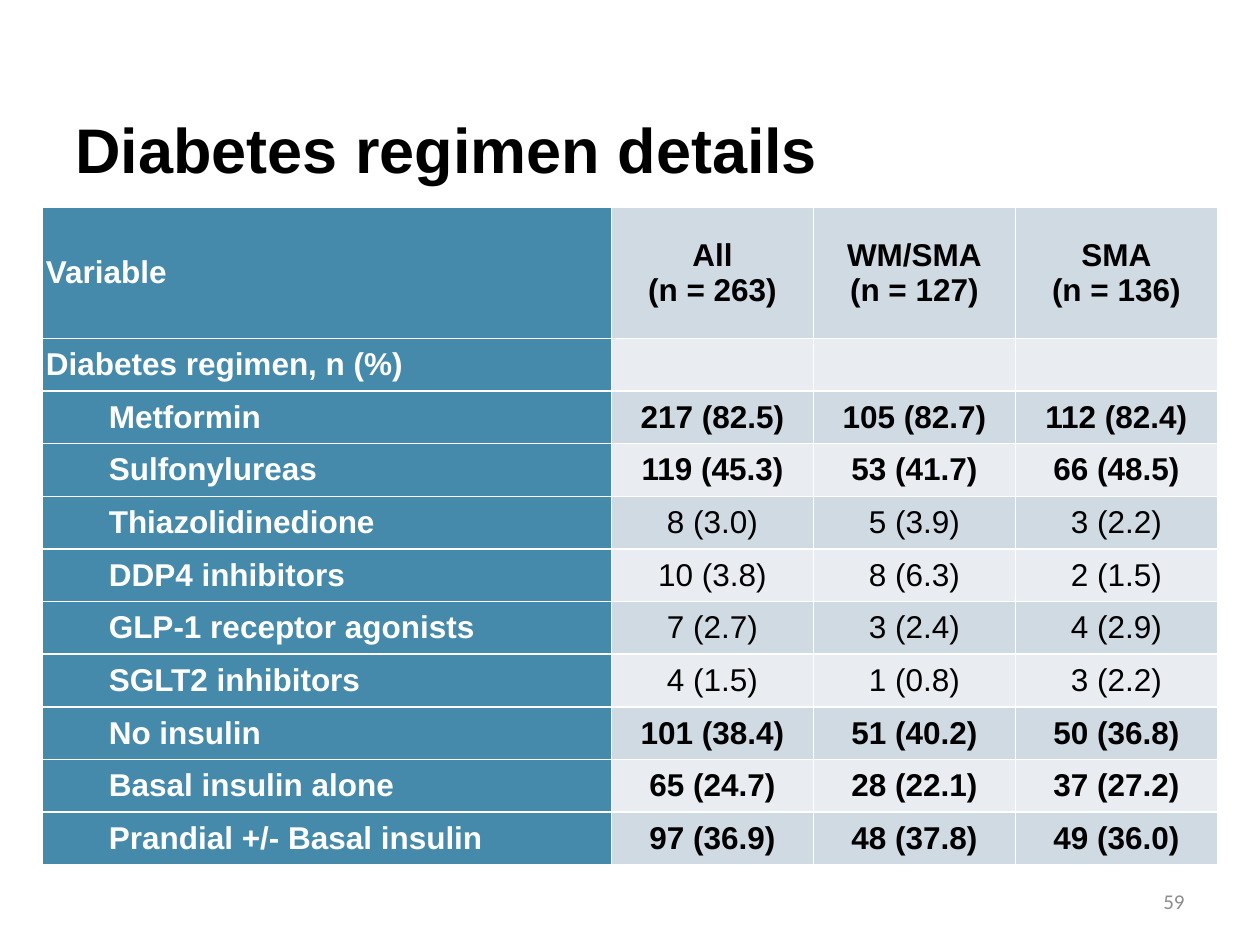
"""Build the diabetes regimen details table slide."""
from lxml import etree
from pptx import Presentation
from pptx.dml.color import RGBColor
from pptx.enum.text import MSO_ANCHOR, PP_ALIGN
from pptx.oxml.ns import qn
from pptx.util import Pt

LEFT, CENTER, RIGHT = PP_ALIGN.LEFT, PP_ALIGN.CENTER, PP_ALIGN.RIGHT
MIDDLE = MSO_ANCHOR.MIDDLE

BLACK = RGBColor(0, 0, 0)
WHITE = RGBColor(255, 255, 255)
GREY = RGBColor(0x8C, 0x8C, 0x8C)
TEAL = RGBColor(0x45, 0x8A, 0xAA)
BANDS = (RGBColor(0xCF, 0xDA, 0xE2), RGBColor(0xE9, 0xED, 0xF1))

TITLE = "Diabetes regimen details"
PAGE_NUMBER = "59"
HEADINGS = [
    ("Variable", "All\n(n = 263)", "WM/SMA\n(n = 127)", "SMA\n(n = 136)"),
    ("Diabetes regimen, n (%)", "", "", ""),
]
REGIMENS = [
    ("Metformin", "217 (82.5)", "105 (82.7)", "112 (82.4)"),
    ("Sulfonylureas", "119 (45.3)", "53 (41.7)", "66 (48.5)"),
    ("Thiazolidinedione", "8 (3.0)", "5 (3.9)", "3 (2.2)"),
    ("DDP4 inhibitors", "10 (3.8)", "8 (6.3)", "2 (1.5)"),
    ("GLP-1 receptor agonists", "7 (2.7)", "3 (2.4)", "4 (2.9)"),
    ("SGLT2 inhibitors", "4 (1.5)", "1 (0.8)", "3 (2.2)"),
    ("No insulin", "101 (38.4)", "51 (40.2)", "50 (36.8)"),
    ("Basal insulin alone", "65 (24.7)", "28 (22.1)", "37 (27.2)"),
    ("Prandial +/- Basal insulin", "97 (36.9)", "48 (37.8)", "49 (36.0)"),
]
ROWS = HEADINGS + REGIMENS
LIGHT_ROWS = {"Thiazolidinedione", "DDP4 inhibitors",
              "GLP-1 receptor agonists", "SGLT2 inhibitors"}

TABLE_LEFT, TABLE_TOP = 24, 118.5
COLUMN_WIDTHS = [325.4] + [115.4] * 3
ROW_HEIGHTS = [74.9] + [30.1] * (len(ROWS) - 1)
INDENT = 36
CELL_FORMAT = {"margin_left": Pt(2.2), "margin_right": Pt(2.2),
               "margin_top": 0, "margin_bottom": 0, "vertical_anchor": MIDDLE}
TITLE_FONT = {"name": "Arial", "size": Pt(36), "bold": True}
NUMBER_FONT = {"name": "Calibri", "size": Pt(12), "bold": False}
TABLE_FONT = {"name": "Arial", "size": Pt(18)}


def apply(target, values):
    for name, value in values.items():
        setattr(target, name, value)


def write_text(frame, text, font, color, alignment):
    frame.text = text
    for paragraph in frame.paragraphs:
        paragraph.alignment = alignment
        for run in paragraph.runs:
            apply(run.font, font)
            run.font.color.rgb = color


def add_text(slide, box, text, font, color, alignment):
    frame = slide.shapes.add_textbox(*map(Pt, box)).text_frame
    apply(frame, {"word_wrap": True, "vertical_anchor": MIDDLE})
    write_text(frame, text, font, color, alignment)


def add_borders(cell):
    properties = cell._tc.get_or_add_tcPr()
    for side in ("a:lnL", "a:lnR", "a:lnT", "a:lnB"):
        line = etree.SubElement(properties, qn(side), w=str(Pt(1)))
        fill = etree.SubElement(line, qn("a:solidFill"))
        etree.SubElement(fill, qn("a:srgbClr"), val=str(WHITE))


def fill_cell(cell, text, row, column):
    is_label = column == 0
    apply(cell, CELL_FORMAT)
    add_borders(cell)
    cell.fill.solid()
    cell.fill.fore_color.rgb = TEAL if is_label else BANDS[row % 2]
    bold = is_label or ROWS[row][0] not in LIGHT_ROWS
    write_text(cell.text_frame, text, {**TABLE_FONT, "bold": bold},
               WHITE if is_label else BLACK, LEFT if is_label else CENTER)
    if is_label and row >= len(HEADINGS):
        paragraph = cell.text_frame.paragraphs[0]
        paragraph._p.get_or_add_pPr().set("marL", str(Pt(INDENT)))


def add_regimen_table(slide):
    size = Pt(sum(COLUMN_WIDTHS)), Pt(sum(ROW_HEIGHTS))
    table = slide.shapes.add_table(len(ROWS), len(COLUMN_WIDTHS), Pt(TABLE_LEFT),
                                   Pt(TABLE_TOP), *size).table
    for column, width in zip(table.columns, COLUMN_WIDTHS):
        column.width = Pt(width)
    for row, height in zip(table.rows, ROW_HEIGHTS):
        row.height = Pt(height)
    for row, texts in enumerate(ROWS):
        for column, text in enumerate(texts):
            fill_cell(table.cell(row, column), text, row, column)


def main():
    presentation = Presentation()
    apply(presentation, {"slide_width": Pt(720), "slide_height": Pt(540)})
    slide = presentation.slides.add_slide(presentation.slide_layouts[6])
    add_text(slide, (36, 57, 648, 55), TITLE, TITLE_FONT, BLACK, LEFT)
    add_text(slide, (516, 500.5, 168, 28.75), PAGE_NUMBER, NUMBER_FONT, GREY, RIGHT)
    add_regimen_table(slide)
    presentation.save("out.pptx")


if __name__ == "__main__":
    main()
